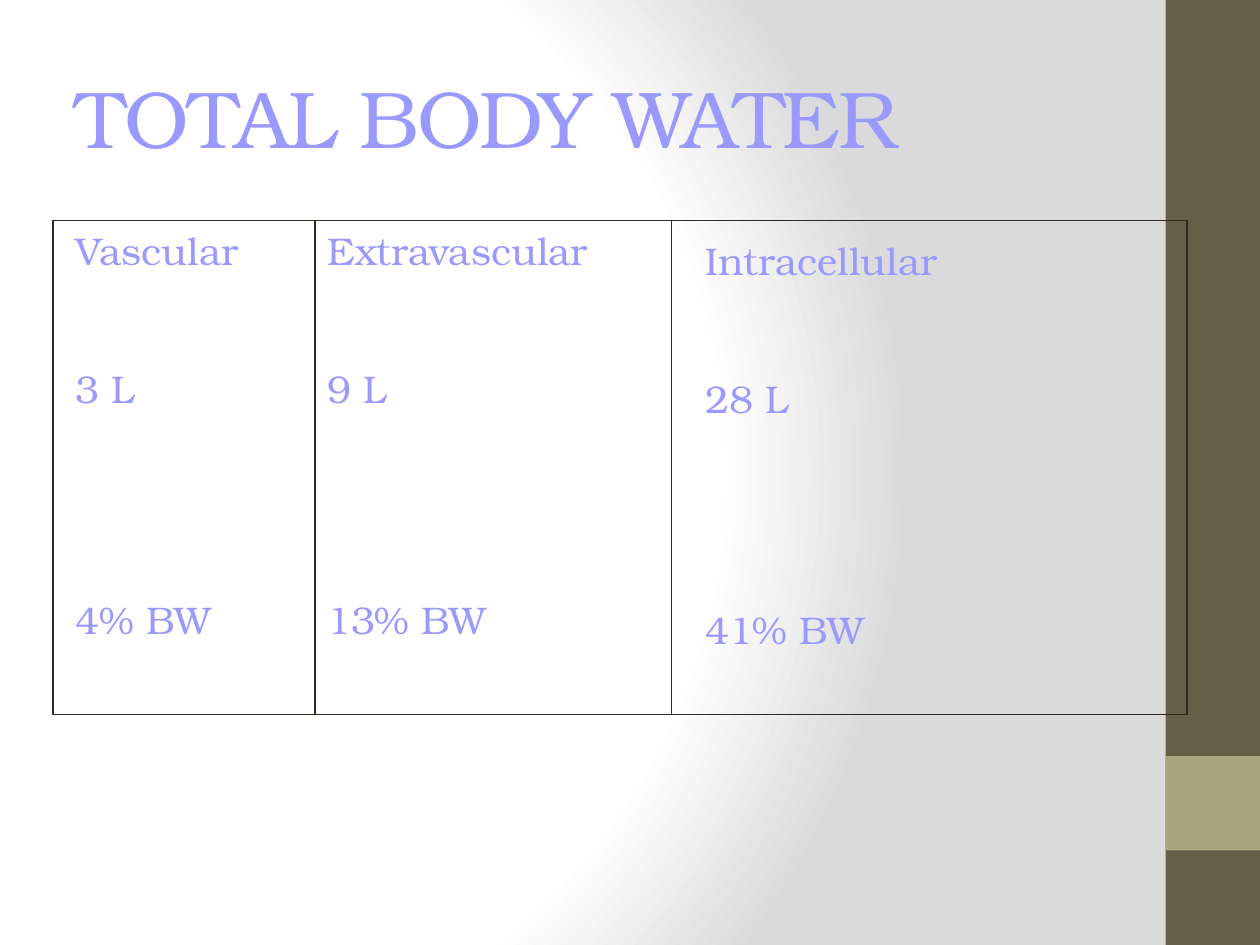
import pptx
import pptx.util
import pptx.dml.color
import pptx.enum.shapes
import pptx.enum.text
import pptx.oxml
import pptx.oxml.ns
import pptx.oxml.xmlchemy

# Content
TITLE = "TOTAL BODY WATER"
COLUMNS = [
    # left, top, width, height, lines
    (0.5, 1.75, 1.92, 4, ("Vascular", "3 L", "4% BW")),
    (2.5, 1.75, 2.92, 3.4, ("Extravascular", "9 L", "13% BW")),
    (5.5, 1.83, 3.83, 4, ("Intracellular", "28 L", "41% BW")),
]

# Format
W, H = 10, 7.5
BAND = 0.75
FRAME = (0.42, 1.75, 9, 3.92)
DIVIDERS = (2.5, 5.33)
LINE_PT = 26.4
LINES_BEFORE = (0, 2, 4)  # extra line heights above each paragraph
COLORS = {"text": "9999FF", "line": "2F2B20", "band": "675E47",
          "accent": "A9A57C", "light": "FFFFFF", "shade": "DADADA"}
STOPS = [(0, "light"), (75, "light"), (100, "shade")]
FONT = "TeX Gyre Bonum"
TITLE_FONT = {"name": FONT, "size": pptx.util.Pt(46)}
BODY_FONT = {"name": FONT, "size": pptx.util.Pt(22)}

inch = pptx.util.Inches
qn = pptx.oxml.ns.qn


def rgb(key):
    return pptx.dml.color.RGBColor.from_string(COLORS[key])


def add_rect(s, box, fill=None):
    sp = s.shapes.add_shape(pptx.enum.shapes.MSO_SHAPE.RECTANGLE, *map(inch, box))
    sp.shadow.inherit = False
    if fill:
        sp.fill.solid()
        sp.fill.fore_color.rgb = rgb(fill)
        sp.line.fill.background()
    else:
        sp.fill.background()
        set_line(sp)
    return sp


def set_line(sp):
    sp.line.color.rgb = rgb("line")
    sp.line.width = pptx.util.Pt(1)


def add_text(s, box, lines, font, gaps=(0,)):
    tf = s.shapes.add_textbox(*map(inch, box)).text_frame
    tf.word_wrap = True
    for i, (text, gap) in enumerate(zip(lines, gaps)):
        p = tf.paragraphs[0] if i == 0 else tf.add_paragraph()
        p.space_before = pptx.util.Pt(gap * LINE_PT)
        r = p.add_run()
        r.text = text
        for name, value in font.items():
            setattr(r.font, name, value)
        r.font.color.rgb = rgb("text")
    return tf


def set_background(s):
    s.background.fill.gradient()
    grad = next(s.element.iter(qn("a:gradFill")))
    stops = "".join(f'<a:gs pos="{pos * 1000}"><a:srgbClr val="{COLORS[key]}"/></a:gs>'
                    for pos, key in STOPS)
    new = pptx.oxml.parse_xml(
        f'<a:gradFill {pptx.oxml.ns.nsdecls("a")} rotWithShape="1">'
        f'<a:gsLst>{stops}</a:gsLst><a:path path="circle">'
        '<a:fillToRect l="20000" t="50000" r="100000" b="50000"/></a:path></a:gradFill>')
    grad.getparent().replace(grad, new)


def main():
    prs = pptx.Presentation()
    prs.slide_width, prs.slide_height = inch(W), inch(H)
    s = prs.slides.add_slide(prs.slide_layouts[6])

    # Background and side band
    set_background(s)
    add_rect(s, (W - BAND, 0, BAND, H), "band")
    add_rect(s, (W - BAND, H - 2 * BAND, BAND, BAND), "accent")

    # Title
    tf = add_text(s, (0.5, 0.3, 8.33, 1.25), [TITLE], TITLE_FONT)
    tf.vertical_anchor = pptx.enum.text.MSO_ANCHOR.MIDDLE
    tf.paragraphs[0].runs[0].font._element.set("spc", "-100")

    # Frame with dividers
    add_rect(s, FRAME)
    top, bottom = FRAME[1], FRAME[1] + FRAME[3]
    for x in DIVIDERS:
        line = s.shapes.add_connector(pptx.enum.shapes.MSO_CONNECTOR.STRAIGHT,
                                      *map(inch, (x, top, x, bottom)))
        set_line(line)
        line._element.spPr.append(pptx.oxml.xmlchemy.OxmlElement("a:effectLst"))

    # Compartment columns
    for *box, lines in COLUMNS:
        add_text(s, box, lines, BODY_FONT, LINES_BEFORE)

    prs.save("out.pptx")


if __name__ == "__main__":
    main()
